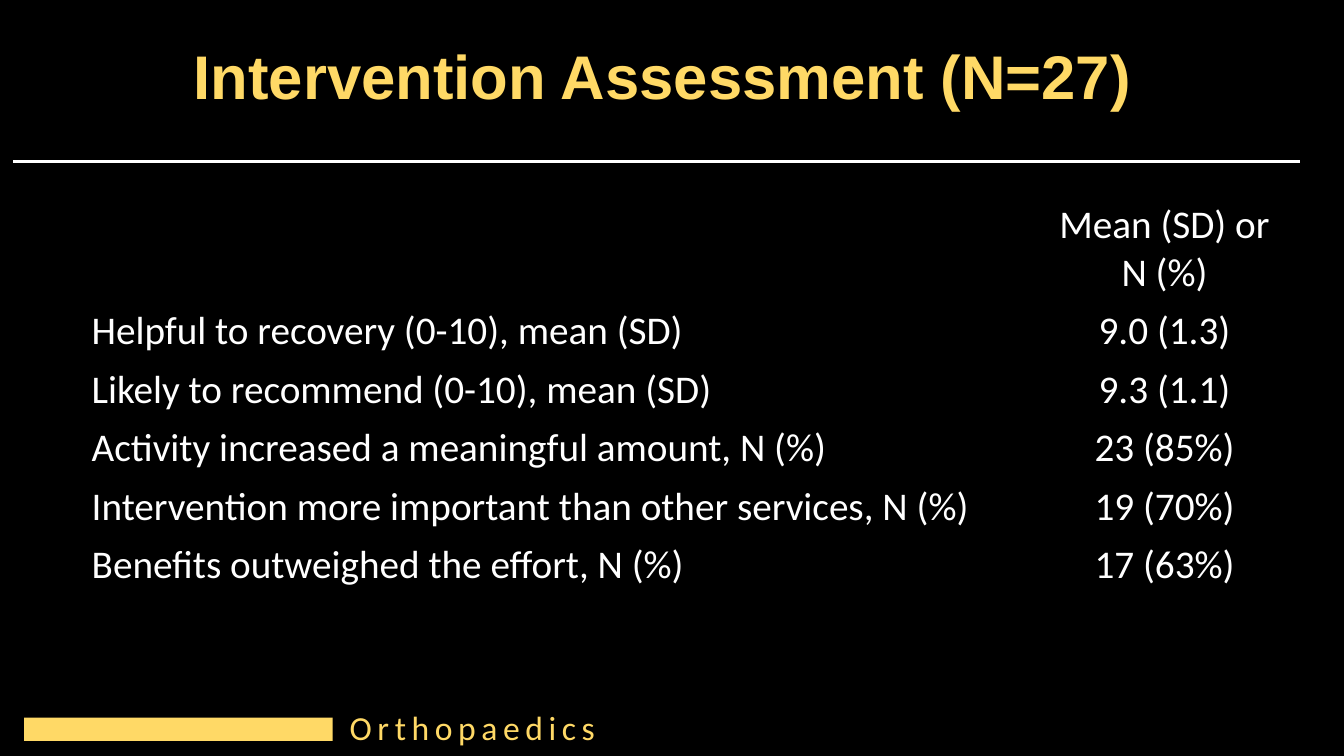
"""Build the Intervention Assessment slide with its results table."""
import dataclasses

import lxml.etree
import pptx
import pptx.dml.color
import pptx.enum.shapes
import pptx.enum.text
import pptx.oxml.ns
import pptx.util

Inches = pptx.util.Inches
Pt = pptx.util.Pt
CENTER = pptx.enum.text.PP_ALIGN.CENTER
LEFT = pptx.enum.text.PP_ALIGN.LEFT


@dataclasses.dataclass(frozen=True)
class Theme:
    black: pptx.dml.color.RGBColor = pptx.dml.color.RGBColor(0, 0, 0)
    white: pptx.dml.color.RGBColor = pptx.dml.color.RGBColor(255, 255, 255)
    gold: pptx.dml.color.RGBColor = pptx.dml.color.RGBColor(255, 217, 102)
    title_size: int = 44
    table_size: int = 28
    footer_size: int = 24


theme = Theme()


def add_run(paragraph, text, font_name, size, color):
    run = paragraph.add_run()
    run.text = text
    run.font.name = font_name
    run.font.size = Pt(size)
    run.font.color.rgb = color
    return run


def set_borders(cell, color):
    properties = cell._tc.get_or_add_tcPr()
    for index, side in enumerate(("lnL", "lnR", "lnT", "lnB")):
        line = lxml.etree.Element(pptx.oxml.ns.qn(f"a:{side}"), w=str(Pt(1)))
        fill = lxml.etree.SubElement(line, pptx.oxml.ns.qn("a:solidFill"))
        lxml.etree.SubElement(fill, pptx.oxml.ns.qn("a:srgbClr"), val=str(color))
        properties.insert(index, line)


presentation = pptx.Presentation()
presentation.slide_width = Inches(13.33)
presentation.slide_height = Inches(7.5)
slide = presentation.slides.add_slide(presentation.slide_layouts[6])
slide.background.fill.solid()
slide.background.fill.fore_color.rgb = theme.black

footer_block = slide.shapes.add_shape(
    pptx.enum.shapes.MSO_SHAPE.RECTANGLE,
    Inches(0.24), Inches(7.12), Inches(3.06), Inches(0.23),
)
footer_block.shadow.inherit = False
footer_block.fill.solid()
footer_block.fill.fore_color.rgb = theme.gold
footer_block.line.fill.background()

footer = slide.shapes.add_textbox(Inches(3.37), Inches(6.96), Inches(5.16), Inches(0.5))
footer.text_frame.word_wrap = True
footer_run = add_run(
    footer.text_frame.paragraphs[0], "Orthopaedics", "Calibri", theme.footer_size, theme.gold
)
footer_run.font._element.set("spc", "400")

rule = slide.shapes.add_connector(
    pptx.enum.shapes.MSO_CONNECTOR.STRAIGHT,
    Inches(0.13), Inches(1.6), Inches(12.89), Inches(1.6),
)
rule.line.color.rgb = theme.white
rule.line.width = Pt(2.5)
lxml.etree.SubElement(rule._element.spPr, pptx.oxml.ns.qn("a:effectLst"))

title = slide.shapes.add_textbox(Inches(0.52), Inches(0.46), Inches(12.29), Inches(1.25))
title_frame = title.text_frame
title_frame.word_wrap = True
title_frame.margin_left = title_frame.margin_top = 0
title_frame.margin_right = Inches(0.18)
title_paragraph = title_frame.paragraphs[0]
title_paragraph.alignment = CENTER
title_paragraph.line_spacing = 0.9
title_run = add_run(
    title_paragraph, "Intervention Assessment (N=27)", "Arial", theme.title_size, theme.gold
)
title_run.font.bold = True

assessments = [
    ("", "Mean (SD) or\nN (%)"),
    ("Helpful to recovery (0-10), mean (SD)", "9.0 (1.3)"),
    ("Likely to recommend (0-10), mean (SD)", "9.3 (1.1)"),
    ("Activity increased a meaningful amount, N (%)", "23 (85%)"),
    ("Intervention more important than other services, N (%)", "19 (70%)"),
    ("Benefits outweighed the effort, N (%)", "17 (63%)"),
]
table = slide.shapes.add_table(
    len(assessments), 2, Inches(0.81), Inches(1.95), Inches(12.16), Inches(3.95)
).table
table.first_row = False
table.horz_banding = False
table.columns[0].width = Inches(9.32)
table.columns[1].width = Inches(2.84)

for row_index, values in enumerate(assessments):
    table.rows[row_index].height = Inches(0.58 if row_index else 1.05)
    for column_index, value in enumerate(values):
        cell = table.cell(row_index, column_index)
        cell.fill.solid()
        cell.fill.fore_color.rgb = theme.black
        set_borders(cell, theme.black)
        for line_index, text in enumerate(value.splitlines()):
            frame = cell.text_frame
            paragraph = frame.add_paragraph() if line_index else frame.paragraphs[0]
            paragraph.alignment = CENTER if column_index else LEFT
            add_run(paragraph, text, "Calibri", theme.table_size, theme.white)

presentation.save("out.pptx")
